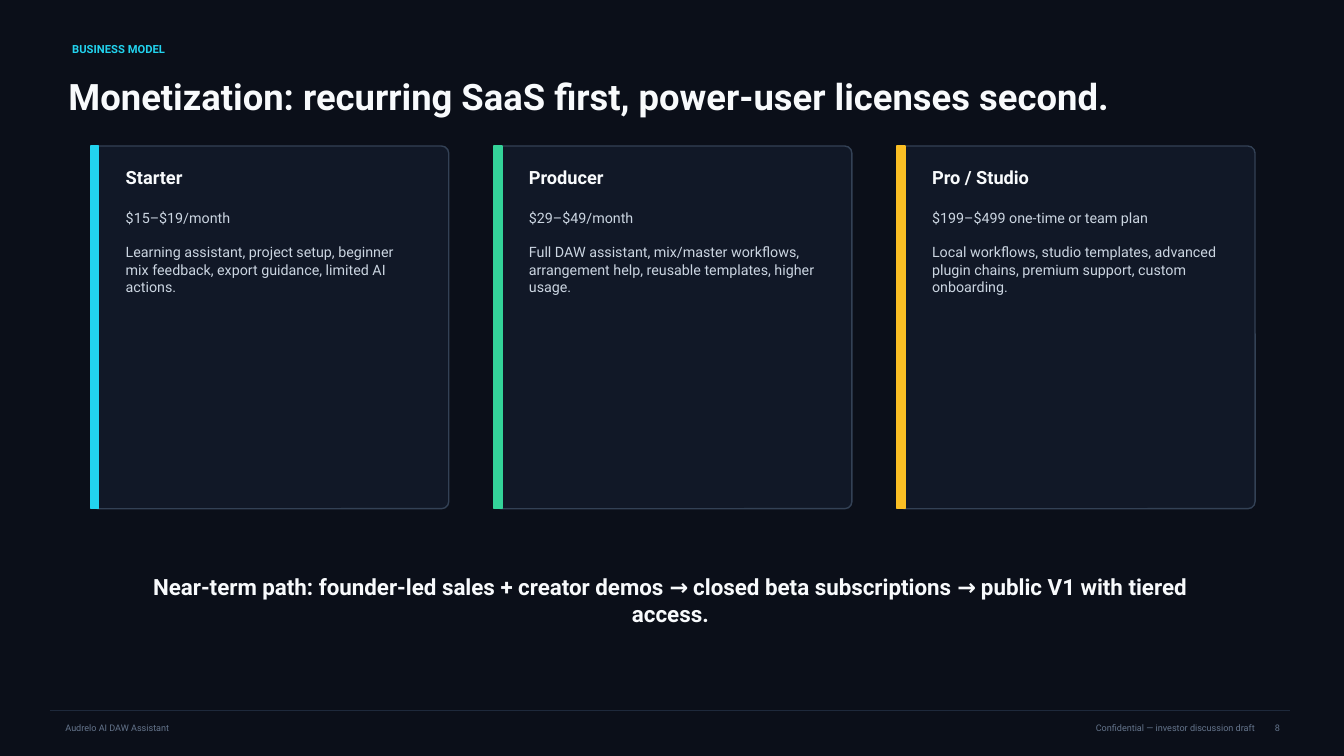
from dataclasses import dataclass

from lxml.etree import SubElement
from pptx import Presentation
from pptx.dml.color import RGBColor
from pptx.enum.shapes import MSO_CONNECTOR, MSO_SHAPE
from pptx.enum.text import MSO_ANCHOR, MSO_AUTO_SIZE, PP_ALIGN
from pptx.oxml.ns import qn
from pptx.shapes.autoshape import Shape
from pptx.slide import Slide
from pptx.util import Cm, Pt

NIGHT = RGBColor(0x0B, 0x0F, 0x19)
PANEL = RGBColor(0x11, 0x18, 0x27)
PANEL_EDGE = RGBColor(0x33, 0x41, 0x55)
RULE = RGBColor(0x1E, 0x29, 0x3B)
WHITE = RGBColor(0xF8, 0xFA, 0xFC)
SILVER = RGBColor(0xCB, 0xD5, 0xE1)
SLATE = RGBColor(0x64, 0x74, 0x8B)
CYAN = RGBColor(0x22, 0xD3, 0xEE)
GREEN = RGBColor(0x34, 0xD3, 0x99)
AMBER = RGBColor(0xFB, 0xBF, 0x24)

FONT = "Roboto"
CARD_LEFT, CARD_TOP, CARD_WIDTH, CARD_HEIGHT = 2.29, 3.68, 9.02, 9.14
CARD_PITCH = 10.16
FOOTER_TOP = 18.08
PAGE_NUMBER_LEFT = 31.88
NOTE_WIDTH = 9.14


@dataclass(frozen=True)
class Box:
    """A rectangle in centimetres."""
    left: float
    top: float
    width: float
    height: float

    def lengths(self) -> tuple[Cm, Cm, Cm, Cm]:
        return Cm(self.left), Cm(self.top), Cm(self.width), Cm(self.height)


@dataclass(frozen=True)
class Plan:
    name: str
    price: str
    features: str
    accent: RGBColor


PLANS = (
    Plan("Starter", "$15–$19/month",
         "Learning assistant, project setup, beginner mix feedback, "
         "export guidance, limited AI actions.", CYAN),
    Plan("Producer", "$29–$49/month",
         "Full DAW assistant, mix/master workflows, arrangement help, "
         "reusable templates, higher usage.", GREEN),
    Plan("Pro / Studio", "$199–$499 one-time or team plan",
         "Local workflows, studio templates, advanced plugin chains, "
         "premium support, custom onboarding.", AMBER),
)


def write(holder: Shape, *paragraphs: str, size: float, color: RGBColor,
          bold: bool = False, align: PP_ALIGN = PP_ALIGN.LEFT,
          anchor: MSO_ANCHOR = MSO_ANCHOR.MIDDLE, gap: float = 0) -> None:
    """Fill a shape with paragraphs, separated by gap points."""
    frame = holder.text_frame
    frame.word_wrap = True
    frame.auto_size = MSO_AUTO_SIZE.NONE
    frame.vertical_anchor = anchor
    for index, text in enumerate(paragraphs):
        paragraph = frame.add_paragraph() if index else frame.paragraphs[0]
        paragraph.alignment = align
        paragraph.space_before = Pt(gap if index else 0)
        run = paragraph.add_run()
        run.text = text
        run.font.name = FONT
        run.font.size = Pt(size)
        run.font.bold = bold
        run.font.color.rgb = color


def add_text(slide: Slide, box: Box, *paragraphs: str, size: float,
             color: RGBColor, **style) -> None:
    holder = slide.shapes.add_textbox(*box.lengths())
    write(holder, *paragraphs, size=size, color=color, **style)


def add_panel(slide: Slide, kind: MSO_SHAPE, box: Box, fill: RGBColor,
              edge: RGBColor) -> Shape:
    panel = slide.shapes.add_shape(kind, *box.lengths())
    panel.shadow.inherit = False
    panel.fill.solid()
    panel.fill.fore_color.rgb = fill
    panel.line.color.rgb = edge
    panel.line.width = Pt(1)
    return panel


def add_plan_card(slide: Slide, plan: Plan, left: float) -> None:
    card = add_panel(slide, MSO_SHAPE.ROUNDED_RECTANGLE,
                     Box(left, CARD_TOP, CARD_WIDTH, CARD_HEIGHT), PANEL, PANEL_EDGE)
    card.adjustments[0] = 0.02
    add_panel(slide, MSO_SHAPE.RECTANGLE,
              Box(left, CARD_TOP, 0.2, CARD_HEIGHT), plan.accent, plan.accent)
    text_left = left + 0.63
    add_text(slide, Box(text_left, CARD_TOP + 0.46, 7.87, 0.64), plan.name,
             size=13, color=WHITE, bold=True)
    add_text(slide, Box(text_left, CARD_TOP + 1.48, 7.87, 7.26), plan.price,
             plan.features, size=10.2, color=SILVER, anchor=MSO_ANCHOR.TOP, gap=12)


def add_footer(slide: Slide) -> None:
    """Draw the rule, the product, and the note ending where the page number starts."""
    rule = slide.shapes.add_connector(MSO_CONNECTOR.STRAIGHT, Cm(1.27), Cm(17.91),
                                      Cm(32.51), Cm(17.91))
    rule.line.color.rgb = RULE
    rule.line.width = Pt(0.8)
    SubElement(rule._element.spPr, qn("a:effectLst"))
    add_text(slide, Box(1.4, FOOTER_TOP, 9.4, 0.51), "Audrelo AI DAW Assistant",
             size=6.5, color=SLATE)
    add_text(slide, Box(PAGE_NUMBER_LEFT - NOTE_WIDTH, FOOTER_TOP, NOTE_WIDTH, 0.51),
             "Confidential — investor discussion draft",
             size=6.5, color=SLATE, align=PP_ALIGN.RIGHT)
    add_text(slide, Box(PAGE_NUMBER_LEFT, FOOTER_TOP, 1.9, 0.51), "8",
             size=6.5, color=SLATE)


def main() -> None:
    deck = Presentation()
    deck.slide_width, deck.slide_height = Cm(33.87), Cm(19.05)
    slide = deck.slides.add_slide(deck.slide_layouts.get_by_name("Title Only"))
    slide.background.fill.solid()
    slide.background.fill.fore_color.rgb = NIGHT

    add_footer(slide)
    add_text(slide, Box(1.57, 0.96, 11.43, 0.56), "BUSINESS MODEL",
             size=8, color=CYAN, bold=True)
    title = slide.shapes.title
    title.left, title.top, title.width, title.height = Box(1.47, 1.73, 30.23, 1.4).lengths()
    write(title, "Monetization: recurring SaaS first, power-user licenses second.",
          size=26, color=WHITE, bold=True)
    for column, plan in enumerate(PLANS):
        add_plan_card(slide, plan, CARD_LEFT + column * CARD_PITCH)
    add_text(slide, Box(3.05, 14.61, 27.69, 1.02),
             "Near-term path: founder-led sales + creator demos → closed beta "
             "subscriptions → public V1 with tiered access.",
             size=16, color=WHITE, bold=True, align=PP_ALIGN.CENTER)
    deck.save("out.pptx")


if __name__ == "__main__":
    main()
